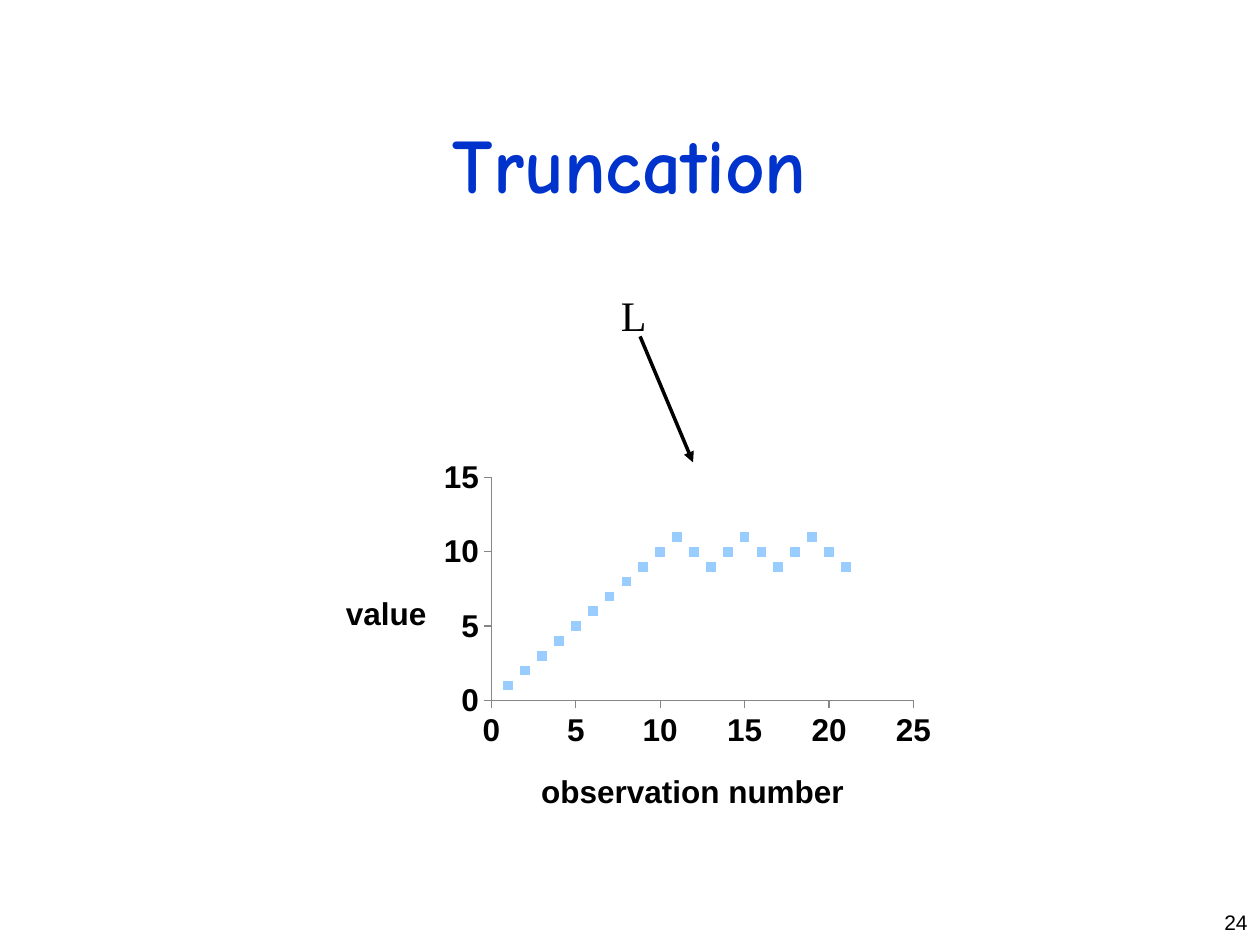
from dataclasses import dataclass

from lxml.etree import SubElement
from pptx import Presentation
from pptx.chart.data import XyChartData
from pptx.dml.color import RGBColor
from pptx.enum.chart import XL_CHART_TYPE, XL_MARKER_STYLE, XL_TICK_MARK
from pptx.enum.shapes import MSO_CONNECTOR
from pptx.enum.text import MSO_ANCHOR, PP_ALIGN
from pptx.oxml import parse_xml
from pptx.oxml.ns import nsdecls, qn
from pptx.util import Inches, Pt

COLORS = {"title": "0033CC", "ink": "000000", "mark": "99CCFF", "axis": "868686"}


@dataclass
class Label:
    text: str
    box: tuple
    size: int
    face: str
    align: PP_ALIGN
    wrap: bool


@dataclass
class Axis:
    name: str
    top: int
    spot: dict


def rgb(key: str) -> RGBColor:
    return RGBColor.from_string(COLORS[key])


def style(font, size: int, face: str, key: str, bold: bool) -> None:
    font.size, font.name, font.bold = Pt(size), face, bold
    font.color.rgb = rgb(key)


def add_label(slide, label: Label) -> None:
    frame = slide.shapes.add_textbox(*map(Inches, label.box)).text_frame
    frame.word_wrap = label.wrap
    para = frame.paragraphs[0]
    para.alignment = label.align
    run = para.add_run()
    run.text = label.text
    style(run.font, label.size, label.face, "ink", False)


def place(node, index: int, spot: dict, inner: bool = False) -> None:
    """Give a chart part a manual layout, in fractions of the chart."""
    for old in node.findall(qn("c:layout")):
        node.remove(old)
    layout = parse_xml(f"<c:layout {nsdecls('c')}><c:manualLayout/></c:layout>")
    if inner:
        SubElement(layout[0], qn("c:layoutTarget")).set("val", "inner")
    for key in "xy":
        SubElement(layout[0], qn(f"c:{key}Mode")).set("val", "edge")
    for key, value in spot.items():
        SubElement(layout[0], qn(f"c:{key}")).set("val", str(value))
    node.insert(index, layout)


def set_axis(axis, plan: Axis) -> None:
    axis.minimum_scale, axis.maximum_scale, axis.major_unit = 0, plan.top, 5
    axis.has_major_gridlines = False
    axis.major_tick_mark = XL_TICK_MARK.OUTSIDE
    axis.minor_tick_mark = XL_TICK_MARK.NONE
    axis.format.line.color.rgb = rgb("axis")
    axis.format.line.width = Pt(0.75)
    style(axis.tick_labels.font, 18, "Arial", "ink", True)
    frame = axis.axis_title.text_frame
    run = frame.paragraphs[0].add_run()
    run.text = plan.name
    style(run.font, 18, "Arial", "ink", True)
    body = frame._txBody.find(qn("a:bodyPr"))
    body.set("rot", "0")
    body.set("vert", "horz")
    place(axis.axis_title._element, 1, plan.spot)


def add_plot(slide) -> None:
    data = XyChartData()
    points = data.add_series("Series 1")
    values = [*range(1, 11), *[11, 10, 9, 10] * 2, 11, 10, 9]
    for number, value in enumerate(values, 1):
        points.add_data_point(number, value)
    box = map(Inches, (2.5, 3.58, 5, 3))
    chart = slide.shapes.add_chart(XL_CHART_TYPE.XY_SCATTER, *box, data).chart
    chart.has_legend = chart.has_title = False
    style(chart.font, 18, "Arial", "ink", True)
    chart.plots[0].vary_by_categories = False

    # Markers without a joining line
    series = chart.plots[0].series[0]
    series.smooth = False
    series.format.line.fill.background()
    mark = series.marker
    mark.style, mark.size = XL_MARKER_STYLE.SQUARE, 5
    mark.format.fill.solid()
    mark.format.fill.fore_color.rgb = rgb("mark")
    mark.format.line.color.rgb = rgb("mark")

    set_axis(chart.category_axis, Axis("observation number", 25, {"x": 0.35, "y": 0.83}))
    set_axis(chart.value_axis, Axis("value", 15, {"x": 0.04, "y": 0.36}))
    area = chart._chartSpace.find(".//" + qn("c:plotArea"))
    place(area, 0, {"x": 0.28, "y": 0.07, "w": 0.67, "h": 0.59}, True)


def add_arrow(slide, start: tuple, end: tuple) -> None:
    arrow = slide.shapes.add_connector(
        MSO_CONNECTOR.STRAIGHT, *map(Inches, start + end))
    arrow.line.color.rgb = rgb("ink")
    arrow.line.width = Pt(2)
    SubElement(arrow.line._get_or_add_ln(), qn("a:tailEnd")).set("type", "triangle")
    SubElement(arrow._element.spPr, qn("a:effectLst"))


def main() -> None:
    deck = Presentation()
    deck.slide_width, deck.slide_height = Inches(10), Inches(7.5)
    slide = deck.slides.add_slide(deck.slide_layouts[5])

    # Title
    title = slide.shapes.title
    title.left, title.top = Inches(0.75), Inches(0.67)
    title.width, title.height = Inches(8.5), Inches(1.25)
    title.text_frame.vertical_anchor = MSO_ANCHOR.MIDDLE
    para = title.text_frame.paragraphs[0]
    para.alignment = PP_ALIGN.CENTER
    run = para.add_run()
    run.text = "Truncation"
    style(run.font, 44, "Comic Neue", "title", True)

    # Page number, arrow and its label, chart
    add_label(slide, Label("24", (9.25, 7.17, 0.75, 0.33), 12, "Arial",
                           PP_ALIGN.RIGHT, True))
    add_arrow(slide, (5.08, 2.67), (5.5, 3.67))
    add_label(slide, Label("L", (4.83, 2.25, 0.41, 0.5), 24, "Times New Roman",
                           PP_ALIGN.LEFT, False))
    add_plot(slide)
    deck.save("out.pptx")


if __name__ == "__main__":
    main()
